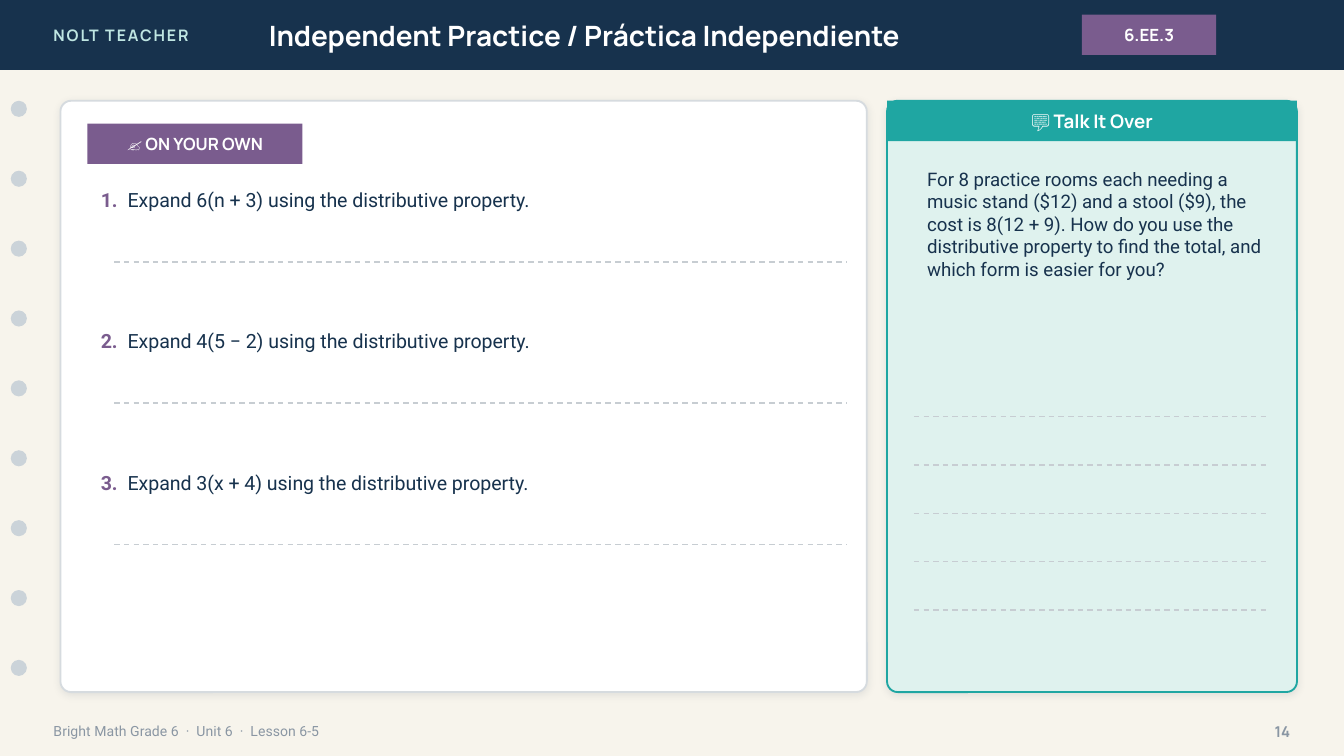
from dataclasses import dataclass

from lxml.etree import SubElement
from pptx import Presentation
from pptx.dml.color import RGBColor
from pptx.enum.dml import MSO_LINE
from pptx.enum.shapes import MSO_CONNECTOR, MSO_SHAPE
from pptx.enum.text import MSO_ANCHOR, MSO_AUTO_SIZE, PP_ALIGN
from pptx.oxml.ns import qn
from pptx.util import Inches, Pt

COLORS = {
    "paper": "F7F4EC", "navy": "17324D", "mint": "BFE6E2", "white": "FFFFFF",
    "plum": "7A5C8E", "hole": "CBD3D9", "gray": "8A96A3", "edge": "D6DBDF",
    "rule": "C7CDD2", "teal": "1FA6A2", "pale": "DFF2EE", "shade": "1C2E42",
}
FORMATS = {
    "brand": {"name": "Manrope", "size": Pt(8.5), "bold": True, "color": "mint"},
    "title": {"name": "Manrope", "size": Pt(15), "bold": True, "color": "white"},
    "badge": {"name": "Manrope", "size": Pt(9), "bold": True, "color": "white"},
    "head": {"name": "Manrope", "size": Pt(10), "bold": True, "color": "white"},
    "number": {"name": "Roboto", "size": Pt(10.5), "bold": True, "color": "plum"},
    "task": {"name": "Roboto", "size": Pt(10.5), "bold": False, "color": "navy"},
    "talk": {"name": "Roboto", "size": Pt(10), "bold": False, "color": "navy"},
    "foot": {"name": "Roboto", "size": Pt(7.5), "bold": False, "color": "gray"},
    "page": {"name": "Manrope", "size": Pt(8), "bold": True, "color": "gray"},
}
LEFT, CENTER, RIGHT = PP_ALIGN.LEFT, PP_ALIGN.CENTER, PP_ALIGN.RIGHT
TOP, MIDDLE = MSO_ANCHOR.TOP, MSO_ANCHOR.MIDDLE
WIDTH = 10
HEIGHT = WIDTH * 9 / 16
TASKS = ("6(n + 3)", "4(5 − 2)", "3(x + 4)")
TASK_GAP = 1.05
LINE_PT = 12.6


@dataclass
class Box:
    left: float
    top: float
    width: float
    height: float

    def frame(self) -> tuple:
        return tuple(map(Inches, (self.left, self.top, self.width, self.height)))


@dataclass
class Label:
    box: Box
    text: str
    style: str
    align: PP_ALIGN = LEFT
    anchor: MSO_ANCHOR = MIDDLE


@dataclass
class Card:
    box: Box
    fill: str
    edge: str
    round: float


@dataclass
class Rules:
    left: float
    right: float
    top: float
    gap: float
    count: int


def rgb(name: str) -> RGBColor:
    return RGBColor.from_string(COLORS[name])


def add_run(para, text: str, style: str):
    run = para.add_run()
    run.text = text
    for key, value in FORMATS[style].items():
        if key == "color":
            run.font.color.rgb = rgb(value)
        else:
            setattr(run.font, key, value)
    return run


def set_frame(shape, anchor: MSO_ANCHOR):
    frame = shape.text_frame
    values = {"word_wrap": True, "auto_size": MSO_AUTO_SIZE.NONE,
              "vertical_anchor": anchor}
    for key, value in values.items():
        setattr(frame, key, value)
    return frame


def write(shape, label: Label):
    para = set_frame(shape, label.anchor).paragraphs[0]
    para.alignment = label.align
    return add_run(para, label.text, label.style)


def add_text(slide, label: Label):
    return write(slide.shapes.add_textbox(*label.box.frame()), label)


def add_block(slide, box: Box, fill: str, kind=MSO_SHAPE.RECTANGLE):
    shape = slide.shapes.add_shape(kind, *box.frame())
    shape.shadow.inherit = False
    shape.fill.solid()
    shape.fill.fore_color.rgb = rgb(fill)
    shape.line.fill.background()
    return shape


def add_badge(slide, label: Label, fill: str) -> None:
    write(add_block(slide, label.box, fill), label)


def add_card(slide, card: Card) -> None:
    """Draw a rounded panel with a thin border and a soft shadow."""
    shape = add_block(slide, card.box, card.fill, MSO_SHAPE.ROUNDED_RECTANGLE)
    shape.adjustments[0] = card.round
    shape.line.color.rgb = rgb(card.edge)
    shape.line.width = Pt(1)
    effects = shape._element.spPr.find(qn("a:effectLst"))
    shade = SubElement(effects, qn("a:outerShdw"), blurRad=str(Pt(4)),
                       dist=str(Pt(1)), dir="5400000", rotWithShape="0")
    color = SubElement(shade, qn("a:srgbClr"), val=COLORS["shade"])
    SubElement(color, qn("a:alpha"), val="10000")


def add_rules(slide, rules: Rules) -> None:
    for i in range(rules.count):
        y = Inches(rules.top + i * rules.gap)
        line = slide.shapes.add_connector(
            MSO_CONNECTOR.STRAIGHT, Inches(rules.left), y, Inches(rules.right), y)
        line.line.color.rgb = rgb("rule")
        line.line.width = Pt(0.75)
        line.line.dash_style = MSO_LINE.DASH
        SubElement(line._element.spPr, qn("a:effectLst"))


def place(slide, holder, box: Box) -> None:
    """Move a placeholder to the given box and to the front."""
    for key, value in zip(("left", "top", "width", "height"), box.frame()):
        setattr(holder, key, value)
    slide.shapes._spTree.append(holder._element)


def fill_tasks(body) -> None:
    frame = set_frame(body, TOP)
    for i, task in enumerate(TASKS):
        para = frame.add_paragraph() if i else frame.paragraphs[0]
        props = para._p.get_or_add_pPr()
        props.set("marL", str(Inches(0.2)))
        props.set("indent", str(-Inches(0.2)))
        SubElement(props, qn("a:buNone"))
        para.line_spacing = Pt(LINE_PT)
        para.space_before = Pt(TASK_GAP * 72 - LINE_PT if i else 0)
        add_run(para, f"{i + 1}.\t", "number")
        add_run(para, f"Expand {task} using the distributive property.", "task")


def main() -> None:
    deck = Presentation()
    deck.slide_width, deck.slide_height = Inches(WIDTH), Inches(HEIGHT)
    slide = deck.slides.add_slide(deck.slide_layouts[1])
    title, body = slide.placeholders
    slide.background.fill.solid()
    slide.background.fill.fore_color.rgb = rgb("paper")

    add_block(slide, Box(0, 0, WIDTH, 0.52), "navy")
    brand = add_text(slide, Label(Box(0.3, 0, 2.4, 0.52), "NOLT TEACHER", "brand"))
    brand._r.get_or_add_rPr().set("spc", "100")
    head = Label(Box(1.9, 0, 5.6, 0.52),
                 "Independent Practice / Práctica Independiente", "title")
    place(slide, title, head.box)
    write(title, head)
    add_badge(slide, Label(Box(8.05, 0.11, 1, 0.3), "6.EE.3", "badge", CENTER), "plum")
    for i in range(9):
        add_block(slide, Box(0.08, 0.75 + i * 0.52, 0.12, 0.12), "hole", MSO_SHAPE.OVAL)
    add_text(slide, Label(Box(0.3, 5.3, 7, 0.28),
                          "Bright Math Grade 6  ·  Unit 6  ·  Lesson 6-5", "foot"))
    add_text(slide, Label(Box(9.2, 5.3, 0.5, 0.28), "14", "page", RIGHT))

    add_card(slide, Card(Box(0.45, 0.75, 6, 4.4), "white", "edge", 0.018))
    add_badge(slide, Label(Box(0.65, 0.92, 1.6, 0.3), "✍️ ON YOUR OWN", "badge", CENTER),
              "plum")
    place(slide, body, Box(0.65, 1.35, 5.65, 2.6))
    fill_tasks(body)
    add_rules(slide, Rules(0.85, 6.3, 1.95, TASK_GAP, len(TASKS)))

    add_card(slide, Card(Box(6.6, 0.75, 3.05, 4.4), "pale", "teal", 0.026))
    add_badge(slide, Label(Box(6.6, 0.75, 3.05, 0.3), "💬 Talk It Over", "head", CENTER),
              "teal")
    add_text(slide, Label(
        Box(6.8, 1.2, 2.7, 1.7),
        "For 8 practice rooms each needing a music stand ($12) and a stool ($9), "
        "the cost is 8(12 + 9). How do you use the distributive property to find "
        "the total, and which form is easier for you?", "talk", LEFT, TOP))
    add_rules(slide, Rules(6.8, 9.45, 3.1, 0.36, 5))
    deck.save("out.pptx")


if __name__ == "__main__":
    main()
